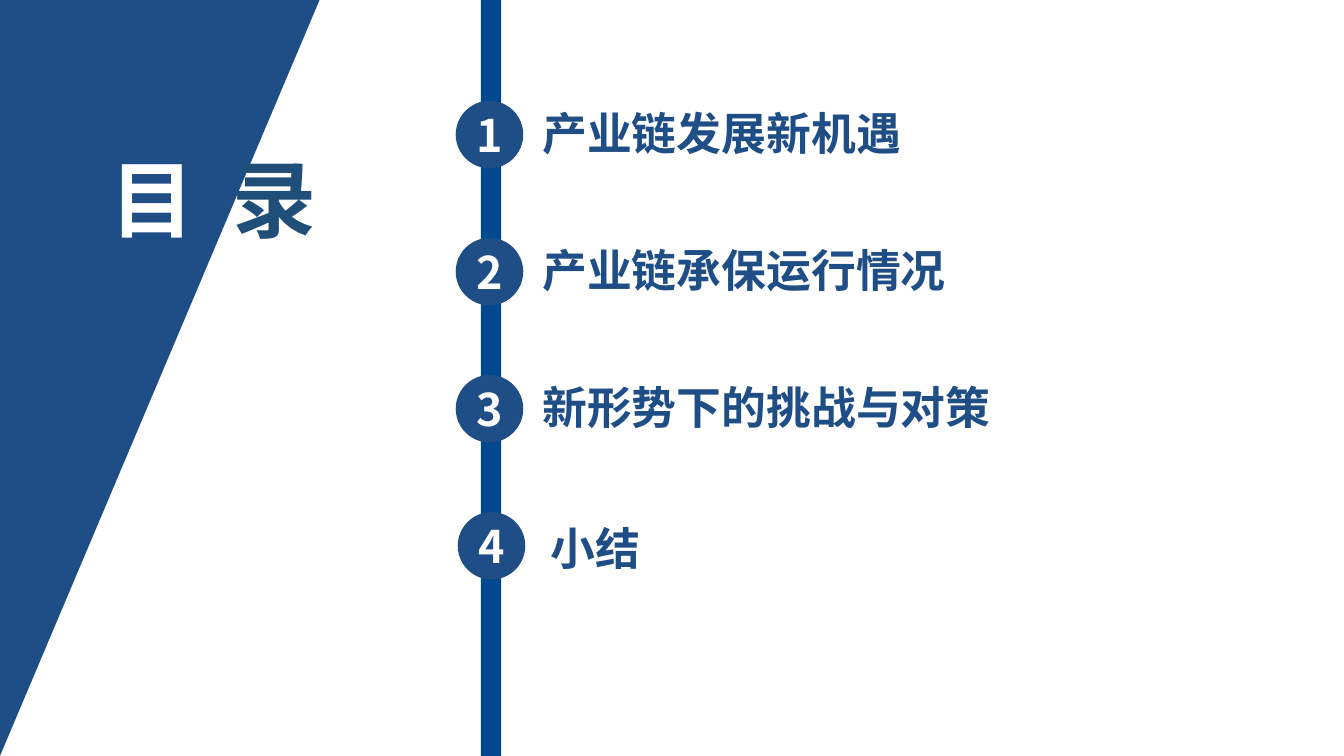
from dataclasses import dataclass

from lxml.etree import SubElement
from pptx import Presentation
from pptx.dml.color import RGBColor
from pptx.enum.shapes import MSO_SHAPE
from pptx.enum.text import MSO_ANCHOR, PP_ALIGN
from pptx.oxml.ns import qn
from pptx.util import Inches, Pt

TITLE = ("目 ", "录")
# Label, shift of the circle to the right, shift of the label (right, down)
CHAPTERS = [
    ("产业链发展新机遇", 0, (0, 0)),
    ("产业链承保运行情况", 0, (0, 0)),
    ("新形势下的挑战与对策", 0, (0, 0)),
    ("小结", 0.02, (0.08, 0.04)),
]


@dataclass(frozen=True)
class Theme:
    font: str = "Noto Sans CJK SC"
    navy: RGBColor = RGBColor(0x1F, 0x4E, 0x86)
    bar: RGBColor = RGBColor(0x00, 0x48, 0x90)
    title_end: RGBColor = RGBColor(0x1F, 0x4E, 0x79)
    white: RGBColor = RGBColor(0xFF, 0xFF, 0xFF)
    title_size: int = 60
    chapter_size: int = 32
    title_tracking: int = 670  # hundredths of a point


THEME = Theme()
WIDTH, HEIGHT = 13.33, 7.5
BAR_LEFT, BAR_WIDTH = 4.77, 0.2
CIRCLE_LEFT, CIRCLE_SIZE = 4.52, 0.67
LABEL_LEFT, LABEL_WIDTH, LABEL_HEIGHT = 5.28, 6.43, 0.64
FIRST_TOP, PITCH = 1, 1.36


def paint(shape, color):
    shape.shadow.inherit = False
    shape.fill.solid()
    shape.fill.fore_color.rgb = color
    shape.line.fill.background()


def style(para, size, color):
    """Set the bold face, for Latin and East Asian text alike."""
    para.font.size = Pt(size)
    para.font.bold = True
    para.font.color.rgb = color
    para.font.name = THEME.font
    properties = para._p.pPr.find(qn("a:defRPr"))
    SubElement(properties, qn("a:ea"), typeface=THEME.font)


def add_shape(slide, kind, left, top, width, height, color):
    shape = slide.shapes.add_shape(
        kind, Inches(left), Inches(top), Inches(width), Inches(height))
    paint(shape, color)
    return shape


def add_text_box(slide, left, top, width, height):
    box = slide.shapes.add_textbox(
        Inches(left), Inches(top), Inches(width), Inches(height))
    box.text_frame.word_wrap = True
    return box.text_frame.paragraphs[0]


def add_wedge(slide):
    builder = slide.shapes.build_freeform(0, 0)
    builder.add_line_segments(
        [(Inches(3.17), 0), (0, Inches(HEIGHT))], close=True)
    paint(builder.convert_to_shape(), THEME.navy)


def add_title(slide):
    para = add_text_box(slide, 1, 1.41, 2.77, 1.11)
    style(para, THEME.title_size, THEME.white)
    for text in TITLE:
        span = para.add_run()
        span.text = text
    first, last = para.runs
    first.font._element.set("spc", str(THEME.title_tracking))
    last.font.color.rgb = THEME.title_end


def add_chapter(slide, index, label, circle_shift, label_shift):
    top = FIRST_TOP + index * PITCH
    circle = add_shape(slide, MSO_SHAPE.OVAL, CIRCLE_LEFT + circle_shift, top,
                       CIRCLE_SIZE, CIRCLE_SIZE, THEME.navy)
    frame = circle.text_frame
    frame.margin_left = frame.margin_right = 0
    frame.margin_top = frame.margin_bottom = 0
    frame.vertical_anchor = MSO_ANCHOR.MIDDLE
    frame.word_wrap = False
    number = frame.paragraphs[0]
    number.text = str(index + 1)
    number.alignment = PP_ALIGN.CENTER
    style(number, THEME.chapter_size, THEME.white)

    right, down = label_shift
    para = add_text_box(slide, LABEL_LEFT + right, top + down,
                        LABEL_WIDTH, LABEL_HEIGHT)
    para.text = label
    style(para, THEME.chapter_size, THEME.navy)


def main():
    deck = Presentation()
    deck.slide_width, deck.slide_height = Inches(WIDTH), Inches(HEIGHT)
    slide = deck.slides.add_slide(deck.slide_layouts[6])
    add_wedge(slide)
    add_title(slide)
    add_shape(slide, MSO_SHAPE.RECTANGLE, BAR_LEFT, 0, BAR_WIDTH, HEIGHT,
              THEME.bar)
    for index, chapter in enumerate(CHAPTERS):
        add_chapter(slide, index, *chapter)
    deck.save("out.pptx")


if __name__ == "__main__":
    main()
